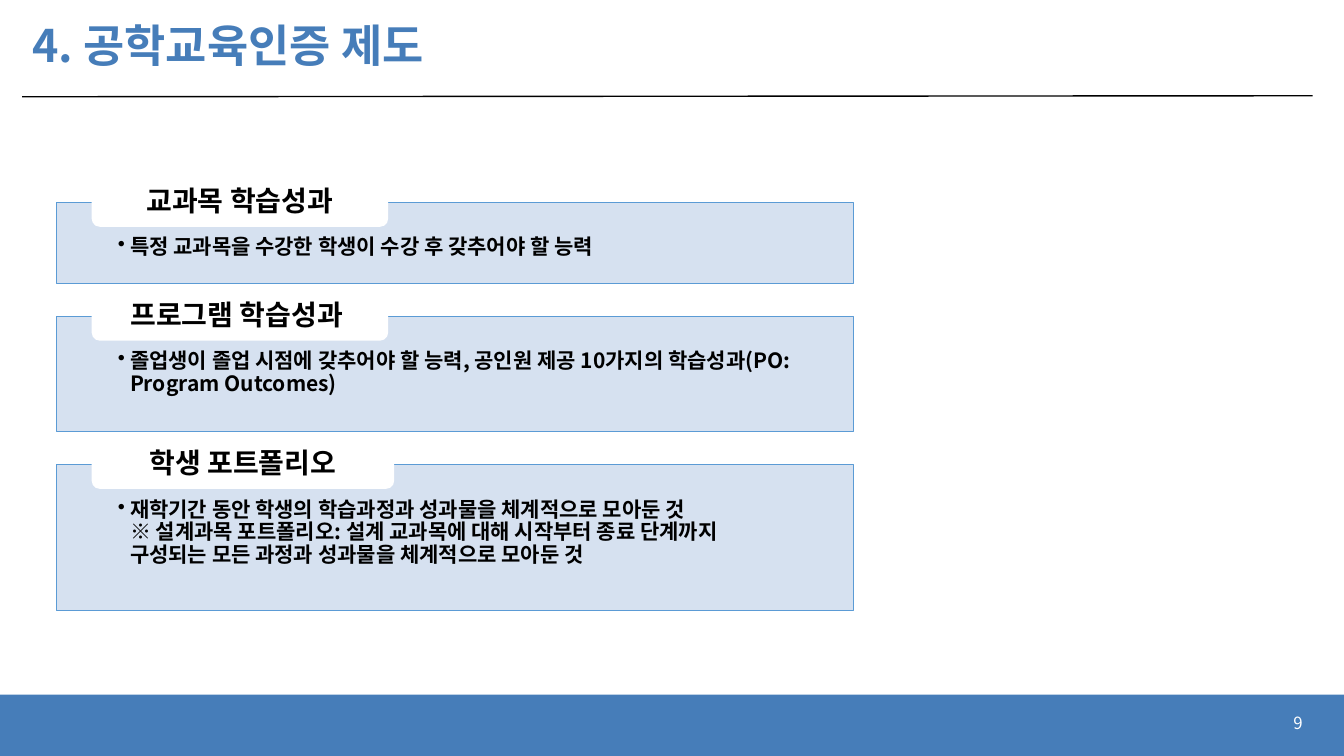
import pptx
import pptx.util
import pptx.dml.color
import pptx.enum.shapes
import pptx.enum.text
import pptx.oxml
import pptx.oxml.ns
import lxml.etree

Inches = pptx.util.Inches
Pt = pptx.util.Pt
ALIGN = pptx.enum.text.PP_ALIGN
ANCHOR = pptx.enum.text.MSO_ANCHOR
SHAPES = pptx.enum.shapes.MSO_SHAPE
qn = pptx.oxml.ns.qn

COLORS = {
    "brand": "467DB9",
    "panel": "D2DEEF",
    "border": "5B9BD5",
    "ink": "000000",
    "paper": "FFFFFF",
}

TOPICS = [
    ("교과목 학습성과", "특정 교과목을 수강한 학생이 수강 후 갖추어야 할 능력", 0.8, 2.94),
    ("프로그램 학습성과 ",
     "졸업생이 졸업 시점에 갖추어야 할 능력, 공인원 제공 10가지의 학습성과(PO: Program Outcomes)",
     1.14, 2.94),
    ("학생 포트폴리오",
     "재학기간 동안 학생의 학습과정과 성과물을 체계적으로 모아둔 것\n"
     "※ 설계과목 포트폴리오: 설계 교과목에 대해 시작부터 종료 단계까지 "
     "구성되는 모든 과정과 성과물을 체계적으로 모아둔 것",
     1.45, 3),
]


def rgb(name):
    return pptx.dml.color.RGBColor.from_string(COLORS[name])


def write_text(shape, text, *, font, size, color="ink", bold=False, align=ALIGN.LEFT,
               anchor=ANCHOR.MIDDLE, insets=(0.1, 0.05, 0.1, 0.05), spacing=0.9, bullet=None):
    frame = shape.text_frame
    frame.word_wrap = True
    frame.auto_size = pptx.enum.text.MSO_AUTO_SIZE.NONE
    frame.vertical_anchor = anchor
    frame.margin_left, frame.margin_top, frame.margin_right, frame.margin_bottom = map(Inches, insets)
    paragraph = frame.paragraphs[0]
    paragraph.text = text.replace("\n", "\v")
    paragraph.alignment = align
    paragraph.line_spacing = spacing
    for run in paragraph.runs:
        run.font.size = Pt(size)
        run.font.bold = bold
        run.font.color.rgb = rgb(color)
        run.font.name = font
        east_asian = lxml.etree.SubElement(run.font._element, qn("a:ea"))
        east_asian.set("typeface", font)
    if bullet:
        properties = paragraph._p.get_or_add_pPr()
        properties.set("marL", str(Inches(0.12)))
        properties.set("indent", str(-Inches(0.12)))
        lxml.etree.SubElement(properties, qn("a:buChar")).set("char", bullet)


class SlideBuilder:
    font = "Noto Sans CJK KR"

    def __init__(self, slide):
        self.slide = slide

    def title(self, text, left, top, width, height):
        heading = self.slide.shapes.title
        heading.left, heading.top = Inches(left), Inches(top)
        heading.width, heading.height = Inches(width), Inches(height)
        write_text(heading, text, font=self.font, size=32, color="brand", bold=True)

    def box(self, left, top, width, height, fill, border=None, opacity=None, kind=SHAPES.RECTANGLE):
        panel = self.slide.shapes.add_shape(
            kind, Inches(left), Inches(top), Inches(width), Inches(height))
        panel.shadow.inherit = False
        panel.fill.solid()
        panel.fill.fore_color.rgb = rgb(fill)
        if opacity:
            shade = panel._element.spPr.find(qn("a:solidFill"))[0]
            lxml.etree.SubElement(shade, qn("a:alpha")).set("val", str(opacity * 1000))
        if border:
            panel.line.color.rgb = rgb(border)
            panel.line.width = Pt(0.5)
        else:
            panel.line.fill.background()
        return panel

    def rule(self, start, end):
        divider = self.slide.shapes.add_connector(
            pptx.enum.shapes.MSO_CONNECTOR.STRAIGHT, *map(Inches, start + end))
        divider.line.color.rgb = rgb("ink")
        divider.line.width = Pt(1)
        lxml.etree.SubElement(divider._element.spPr, qn("a:effectLst"))

    def label(self, text, left, top, width, height, **style):
        caption = self.slide.shapes.add_textbox(
            Inches(left), Inches(top), Inches(width), Inches(height))
        write_text(caption, text, font=self.font, **style)

    def topic(self, heading, description, top, height, tab_width):
        panel = self.box(0.56, top, 7.9, height, "panel", "border", 90)
        write_text(panel, description, font=self.font, size=15, bold=True,
                   anchor=ANCHOR.TOP, insets=(0.61, 0.34, 0.61, 0.12), bullet="•")
        tab = self.box(0.91, top - 0.24, tab_width, 0.48, "paper", kind=SHAPES.ROUNDED_RECTANGLE)
        write_text(tab, heading, font=self.font, size=20, bold=True,
                   align=ALIGN.CENTER, insets=(0.23, 0, 0.23, 0))


def main():
    deck = pptx.Presentation()
    deck.slide_width, deck.slide_height = Inches(13.33), Inches(7.5)
    page = SlideBuilder(deck.slides.add_slide(deck.slide_layouts[5]))
    page.box(0, 6.89, 13.33, 0.61, "brand")
    page.rule((0.22, 0.96), (13.02, 0.95))
    page.title("4. 공학교육인증 제도", 0.22, 0.1, 12.81, 0.75)
    page.label("9", 10.02, 6.97, 3, 0.4, size=12, color="paper", align=ALIGN.RIGHT, spacing=1.0)
    top, gap = 2.01, 0.33
    for heading, description, height, tab_width in TOPICS:
        page.topic(heading, description, top, height, tab_width)
        top += height + gap
    deck.save("out.pptx")


if __name__ == "__main__":
    main()
